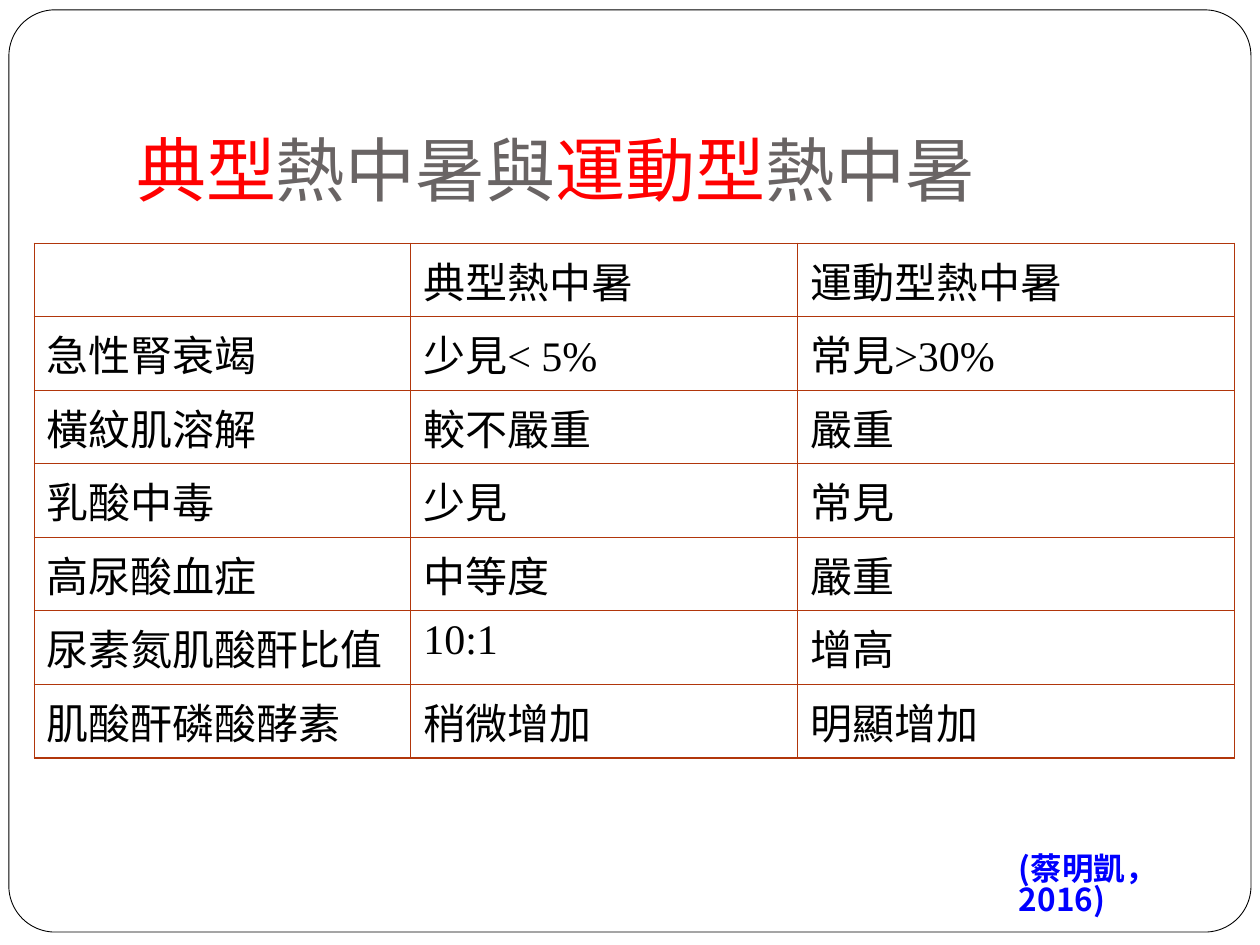
import pptx
import pptx.dml.color
import pptx.enum.shapes
import pptx.enum.text
import pptx.oxml
import pptx.oxml.ns
import pptx.util
from lxml import etree

Cm, Pt = pptx.util.Cm, pptx.util.Pt
qn = pptx.oxml.ns.qn
SERIF, SANS = "Times New Roman", "Noto Sans CJK SC"
RED, GREY, BLACK, BLUE, RUST, WHITE = (
    "FF0000", "696464", "000000", "0000FF", "B1360B", "FFFFFF")


def rgb(value):
    return pptx.dml.color.RGBColor.from_string(value)


class SlideBuilder:
    def __init__(self, slide, latin, east_asian):
        self.slide, self.latin, self.east_asian = slide, latin, east_asian

    def style_run(self, r, size, color, bold=False, latin=None):
        r.font.size, r.font.bold = Pt(size), bold
        r.font.name = latin or self.latin
        r.font.color.rgb = rgb(color)
        ea = etree.Element(qn("a:ea"), typeface=self.east_asian)
        r.font._element.find(qn("a:latin")).addnext(ea)

    def frame(self, left, top, width, height, radius):
        sp = self.slide.shapes.add_shape(
            pptx.enum.shapes.MSO_SHAPE.ROUNDED_RECTANGLE,
            Cm(left), Cm(top), Cm(width), Cm(height))
        sp.adjustments[0] = radius
        sp.shadow.inherit = False
        sp.fill.solid()
        sp.fill.fore_color.rgb = rgb(WHITE)
        sp.line.color.rgb = rgb(BLACK)
        sp.line.width = Pt(0.5)
        # The frame lies behind the title placeholder
        self.slide.shapes._spTree.insert(2, sp._element)

    def title(self, left, top, width, height, parts, size):
        sp = self.slide.shapes.title
        sp.left, sp.top, sp.width, sp.height = (
            Cm(left), Cm(top), Cm(width), Cm(height))
        tf = sp.text_frame
        tf.auto_size = pptx.enum.text.MSO_AUTO_SIZE.NONE
        tf.vertical_anchor = pptx.enum.text.MSO_ANCHOR.BOTTOM
        tf.margin_bottom = Cm(0.25)
        p = tf.paragraphs[0]
        p.alignment = pptx.enum.text.PP_ALIGN.LEFT
        for text, color in parts:
            r = p.add_run()
            r.text = text
            self.style_run(r, size, color)

    def table(self, left, top, widths, row_height, rows, size):
        table = self.slide.shapes.add_table(
            len(rows), len(widths), Cm(left), Cm(top),
            Cm(sum(widths)), Cm(row_height * len(rows))).table
        for column, width in zip(table.columns, widths):
            column.width = Cm(width)
        for i, texts in enumerate(rows):
            for j, text in enumerate(texts):
                cell = table.cell(i, j)
                cell.fill.background()
                self.cell_borders(cell, RUST, 0.75)
                if text:
                    cell.text_frame.text = text
                    r = cell.text_frame.paragraphs[0].runs[0]
                    self.style_run(r, size, BLACK)

    def cell_borders(self, cell, color, width):
        props = cell._tc.get_or_add_tcPr()
        for i, side in enumerate(("lnL", "lnR", "lnT", "lnB")):
            line = etree.Element(qn("a:" + side), w=str(Pt(width)))
            fill = etree.SubElement(line, qn("a:solidFill"))
            etree.SubElement(fill, qn("a:srgbClr"), val=color)
            props.insert(i, line)

    def citation(self, left, top, width, height, text, size):
        sp = self.slide.shapes.add_textbox(
            Cm(left), Cm(top), Cm(width), Cm(height))
        tf = sp.text_frame
        tf.word_wrap = True
        tf.text = text
        p = tf.paragraphs[0]
        p.line_spacing = 0.83
        self.style_run(p.runs[0], size, BLUE, bold=True, latin=SANS)


def main():
    prs = pptx.Presentation()
    prs.slide_width, prs.slide_height = Cm(25.4), Cm(19.05)
    s = SlideBuilder(prs.slides.add_slide(prs.slide_layouts[5]), SERIF, SANS)

    s.frame(0.18, 0.2, 25.04, 18.59, 0.05)
    s.title(2.49, 1.32, 21.08, 3.18, [
        ("典型", RED), ("熱中暑與", GREY), ("運動型", RED), ("熱中暑", GREY)], 40)
    s.table(0.69, 4.9, [7.59, 7.8, 8.81], 1.22, [
        ("", "典型熱中暑", "運動型熱中暑"),
        ("急性腎衰竭", "少見< 5%", "常見>30%"),
        ("橫紋肌溶解", "較不嚴重", "嚴重"),
        ("乳酸中毒", "少見", "常見"),
        ("高尿酸血症", "中等度", "嚴重"),
        ("尿素氮肌酸酐比值", "10:1", "增高"),
        ("肌酸酐磷酸酵素", "稍微增加", "明顯增加"),
    ], 24)
    s.citation(20.29, 17.12, 5, 1.02, "(蔡明凱，2016)", 18)
    prs.save("out.pptx")


if __name__ == "__main__":
    main()
